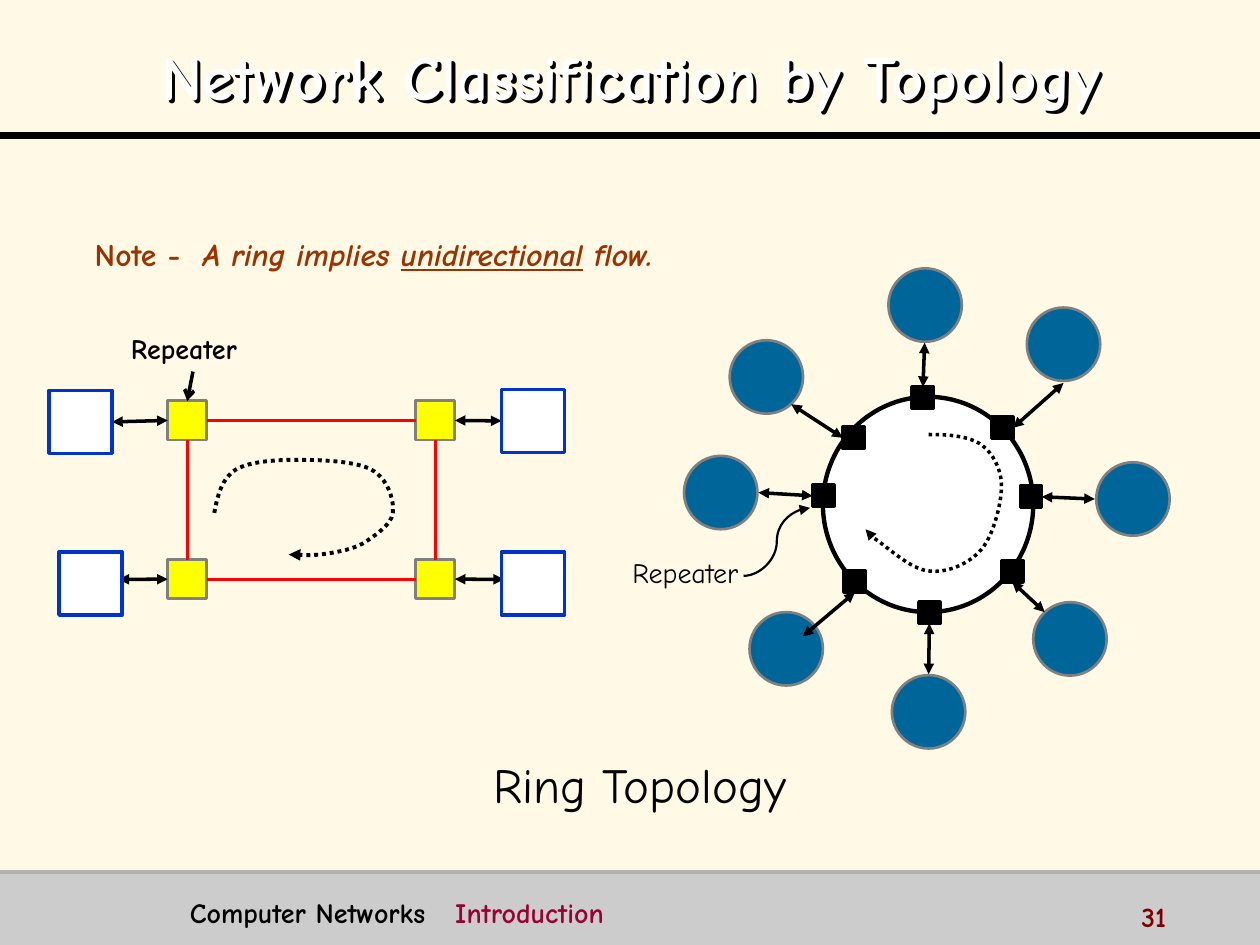
"""Build the ring topology slide with its square and circular rings."""
import dataclasses
import typing

import pptx
import pptx.dml.color
import pptx.enum.dml
import pptx.enum.shapes
import pptx.enum.text
import pptx.oxml.ns
import pptx.util
from lxml import etree

Cm = pptx.util.Cm
Pt = pptx.util.Pt
SHAPE = pptx.enum.shapes.MSO_SHAPE
CONNECTOR = pptx.enum.shapes.MSO_CONNECTOR
ALIGN = pptx.enum.text.PP_ALIGN
Point = tuple[float, float]
Box = tuple[float, float, float, float]
TOP, LEFT, BOTTOM, RIGHT = range(4)


@dataclasses.dataclass(frozen=True)
class Theme:
    font: str = "Comic Neue"
    paper: str = "FFF9E6"
    white: str = "FFFFFF"
    ink: str = "000000"
    band: str = "CCCCCC"
    band_edge: str = "B2B2B2"
    outline: str = "808080"
    station: str = "0033CC"
    repeater: str = "FFFF00"
    cable: str = "FF0000"
    node: str = "006699"
    note: str = "993300"
    chapter: str = "990033"
    page: str = "800000"
    title_size: int = 36
    caption_size: int = 28
    note_size: int = 18
    label_size: int = 16


THEME = Theme()


@dataclasses.dataclass(frozen=True)
class Span:
    text: str
    size: int = THEME.label_size
    color: str = THEME.ink
    bold: bool = False
    italic: bool = False
    underline: bool = False
    spacing: float = 0


@dataclasses.dataclass(frozen=True)
class Corner:
    repeater: Point
    station: Point
    outer_side: int
    arrow_tip: typing.Optional[Point] = None


@dataclasses.dataclass(frozen=True)
class RingNode:
    repeater: Point
    side: int
    circle: Point
    arrow_tip: Point


CORNERS = [
    Corner((3.38, 8.08), (0.99, 7.87), LEFT),
    Corner((8.38, 8.08), (10.11, 7.85), RIGHT),
    Corner((8.38, 11.28), (10.11, 11.13), RIGHT, (10.16, 11.68)),
    Corner((3.38, 11.28), (1.19, 11.13), LEFT, (2.39, 11.68)),
]
RING_NODES = [
    RingNode((18.39, 7.8), TOP, (17.91, 5.41), (18.64, 6.91)),
    RingNode((19.99, 8.41), RIGHT, (20.7, 6.2), (21.44, 7.72)),
    RingNode((20.57, 9.8), RIGHT, (22.1, 9.32), (22.07, 10.06)),
    RingNode((20.19, 11.3), BOTTOM, (20.83, 12.14), (21.06, 12.34)),
    RingNode((18.52, 12.14), BOTTOM, (17.98, 13.61), (18.72, 13.59)),
    RingNode((17.02, 11.51), BOTTOM, (15.11, 12.34), (16.18, 12.83)),
    RingNode((16.38, 9.78), LEFT, (13.79, 9.19), (15.29, 9.93)),
    RingNode((16.99, 8.61), LEFT, (14.71, 6.86), (15.95, 8.15)),
]
SQUARE_FLOW = [
    (4.32, 10.34), (4.39, 9.98), (4.47, 9.65), (4.75, 9.47), (5.03, 9.3), (5.56, 9.27), (6.02, 9.27),
    (6.48, 9.27), (7.19, 9.3), (7.49, 9.47), (7.82, 9.65), (7.95, 10.08), (7.92, 10.34),
    (7.9, 10.57), (7.54, 10.82), (7.29, 10.97), (7.04, 11.1), (6.68, 11.15), (6.45, 11.18),
    (6.2, 11.2), (5.92, 11.18), (5.82, 11.18),
]
CIRCLE_FLOW = [
    (18.72, 8.76), (19.13, 8.76), (19.53, 8.79), (19.79, 8.97), (20.02, 9.14), (20.19, 9.47), (20.19, 9.8),
    (20.19, 10.16), (20.02, 10.8), (19.79, 11.07), (19.53, 11.38), (19.07, 11.56), (18.72, 11.51),
    (18.36, 11.48), (17.88, 11.02), (17.65, 10.87), (17.45, 10.74), (17.48, 10.69), (17.45, 10.67),
]


def rgb(color: str) -> pptx.dml.color.RGBColor:
    return pptx.dml.color.RGBColor.from_string(color)


def add_child(parent: typing.Any, tag: str, **attributes: str) -> typing.Any:
    child = etree.SubElement(parent, pptx.oxml.ns.qn(tag))
    for key, value in attributes.items():
        child.set(key, value)
    return child


def style_line(line_shape: typing.Any, color: str, width: float, head: str = "", tail: str = "") -> None:
    line_shape.line.color.rgb = rgb(color)
    line_shape.line.width = Pt(width)
    outline = line_shape.element.spPr.find(pptx.oxml.ns.qn("a:ln"))
    for tag, kind in (("a:headEnd", head), ("a:tailEnd", tail)):
        if kind:
            add_child(outline, tag, type=kind)


def add_block(slide: typing.Any, preset: typing.Any, box: Box, fill: str, edge: str = "", width: float = 0) -> typing.Any:
    block = slide.shapes.add_shape(preset, *map(Cm, box))
    block.shadow.inherit = False
    block.fill.solid()
    block.fill.fore_color.rgb = rgb(fill)
    if edge:
        style_line(block, edge, width)
    else:
        block.line.fill.background()
    return block


def add_link(slide: typing.Any, start: Point, end: Point, color: str = THEME.ink, width: float = 2,
             head: str = "", tail: str = "", kind: typing.Any = CONNECTOR.STRAIGHT) -> typing.Any:
    link = slide.shapes.add_connector(kind, *map(Cm, start + end))
    style_line(link, color, width, head, tail)
    add_child(link.element.spPr, "a:effectLst")
    return link


def add_flow(slide: typing.Any, controls: list[Point], width: float) -> None:
    builder = slide.shapes.build_freeform(*map(Cm, controls[0]))
    builder.add_line_segments([tuple(map(Cm, point)) for point in controls[1:]], close=False)
    flow = builder.convert_to_shape()
    segments = list(flow.element.iter(pptx.oxml.ns.qn("a:lnTo")))
    outline = segments[0].getparent()
    for first in range(0, len(segments), 3):
        curve = add_child(outline, "a:cubicBezTo")
        for segment in segments[first:first + 3]:
            curve.append(segment[0])
            outline.remove(segment)
    flow.shadow.inherit = False
    flow.fill.background()
    flow.line.dash_style = pptx.enum.dml.MSO_LINE.ROUND_DOT
    style_line(flow, THEME.ink, width, tail="triangle")


def write(holder: typing.Any, spans: list[Span], align: typing.Any = ALIGN.LEFT) -> typing.Any:
    frame = holder.text_frame
    frame.word_wrap = True
    frame.auto_size = pptx.enum.text.MSO_AUTO_SIZE.NONE
    paragraph = frame.paragraphs[0]
    paragraph.alignment = align
    paragraph.space_before = Pt(0)
    if holder.is_placeholder:
        properties = paragraph._p.get_or_add_pPr()
        properties.set("marL", "0")
        properties.set("indent", "0")
        add_child(properties, "a:buNone")
    for span in spans:
        run = paragraph.add_run()
        run.text = span.text
        font = run.font
        font.size, font.bold, font.italic, font.underline = Pt(span.size), span.bold, span.italic, span.underline
        font.color.rgb = rgb(span.color)
        font.name = THEME.font
        if span.spacing:
            run._r.get_or_add_rPr().set("spc", str(round(span.spacing * 100)))
    return paragraph


def place(holder: typing.Any, box: Box) -> None:
    holder.left, holder.top, holder.width, holder.height = map(Cm, box)
    holder.text_frame.vertical_anchor = pptx.enum.text.MSO_ANCHOR.MIDDLE


def add_label(slide: typing.Any, box: Box, spans: list[Span], align: typing.Any = ALIGN.LEFT) -> None:
    write(slide.shapes.add_textbox(*map(Cm, box)), spans, align)


def draw_frame(slide: typing.Any) -> None:
    add_block(slide, SHAPE.RECTANGLE, (0, 17.58, 25.4, 1.47), THEME.band)
    add_link(slide, (0, 2.74), (25.4, 2.74), width=4)
    add_link(slide, (0, 17.58), (25.4, 17.58), THEME.band_edge)
    add_label(slide, (3.58, 17.93, 18.49, 0.79), [
        Span("Computer Networks", bold=True), Span(" ", bold=True, spacing=11.4),
        Span("Introduction", color=THEME.chapter, bold=True)])
    add_label(slide, (22.76, 18.01, 2.54, 0.64), [Span("31", color=THEME.page, bold=True)])


def draw_text(slide: typing.Any) -> None:
    title, body = slide.placeholders
    place(title, (0.51, 0.33, 24.41, 2.21))
    heading = Span("Network Classification by Topology", THEME.title_size, THEME.white, bold=True)
    write(title, [heading], ALIGN.CENTER).line_spacing = 1.1
    effects = add_child(title.element.spPr, "a:effectLst")
    add_child(add_child(effects, "a:outerShdw", dist="35921", dir="2700000"), "a:srgbClr", val=THEME.ink)
    place(body, (1.27, 3.71, 15.19, 2.44))
    body.text_frame.margin_left, body.text_frame.margin_top = Cm(0.64), Cm(0.5)
    note = Span("Note -", THEME.note_size, THEME.note, bold=True)
    phrase = dataclasses.replace(note, text="A ring implies ", italic=True)
    write(body, [
        note, dataclasses.replace(note, text=" ", spacing=6.3), phrase,
        dataclasses.replace(phrase, text="unidirectional", underline=True),
        dataclasses.replace(phrase, text=" flow.")])
    add_label(slide, (2.39, 6.55, 3, 0.94), [Span("Repeater", bold=True)])
    add_label(slide, (12.5, 11.07, 2.72, 0.94), [Span("Repeater")])
    add_label(slide, (8.13, 15.09, 9.53, 1.45), [Span("Ring Topology", THEME.caption_size)], ALIGN.CENTER)


def draw_square_ring(slide: typing.Any) -> None:
    repeaters = []
    for corner in CORNERS:
        repeater = add_block(slide, SHAPE.RECTANGLE, corner.repeater + (0.79, 0.79), THEME.repeater, THEME.outline, 1.5)
        arrow = add_link(slide, corner.repeater, corner.arrow_tip or corner.station, head="triangle", tail="triangle")
        arrow.begin_connect(repeater, corner.outer_side)
        station = add_block(slide, SHAPE.RECTANGLE, corner.station + (1.27, 1.27), THEME.white, THEME.station, 2)
        if not corner.arrow_tip:
            arrow.end_connect(station, LEFT + RIGHT - corner.outer_side)
        repeaters.append(repeater)
    for index, (leaving, entering) in enumerate(((RIGHT, LEFT), (BOTTOM, TOP), (LEFT, RIGHT), (TOP, BOTTOM))):
        cable = add_link(slide, (0, 0), (1, 1), THEME.cable, 1.75)
        cable.begin_connect(repeaters[index], leaving)
        cable.end_connect(repeaters[(index + 1) % 4], entering)
    add_link(slide, (3.89, 7.49), (3.78, 8.08), tail="arrow").end_connect(repeaters[0], TOP)
    add_flow(slide, SQUARE_FLOW, 2.25)


def draw_circular_ring(slide: typing.Any) -> None:
    add_block(slide, SHAPE.OVAL, (16.59, 8, 4.24, 4.34), THEME.white, THEME.ink, 2.5)
    for node in RING_NODES:
        add_block(slide, SHAPE.OVAL, node.circle + (1.48, 1.48), THEME.node, THEME.outline, 1.5)
        repeater = add_block(slide, SHAPE.RECTANGLE, node.repeater + (0.43, 0.43), THEME.ink, THEME.ink, 2)
        arrow = add_link(slide, node.repeater, node.arrow_tip, head="triangle", tail="triangle")
        arrow.begin_connect(repeater, node.side)
    add_link(slide, (14.99, 11.61), (16.33, 10.24), width=1.25, tail="triangle", kind=CONNECTOR.CURVE)
    add_flow(slide, CIRCLE_FLOW, 2)


def main() -> None:
    deck = pptx.Presentation()
    deck.slide_width, deck.slide_height = Cm(25.4), Cm(19.05)
    slide = deck.slides.add_slide(deck.slide_layouts[1])
    slide.background.fill.solid()
    slide.background.fill.fore_color.rgb = rgb(THEME.paper)
    draw_frame(slide)
    draw_text(slide)
    draw_square_ring(slide)
    draw_circular_ring(slide)
    deck.save("out.pptx")


if __name__ == "__main__":
    main()
